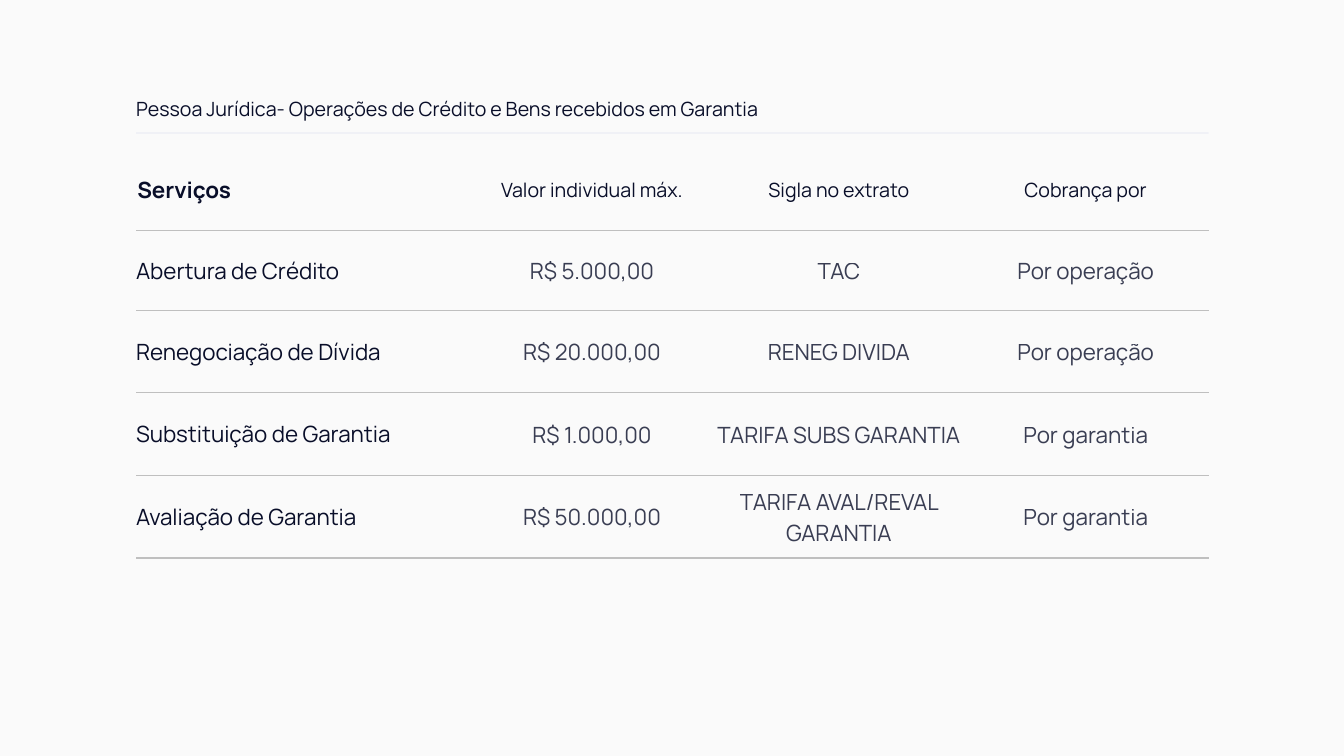
import pptx
import pptx.dml.color
import pptx.enum.shapes
import pptx.enum.text
import pptx.oxml
import pptx.oxml.ns
import pptx.util
from lxml import etree

Cm = pptx.util.Cm
Pt = pptx.util.Pt
RGBColor = pptx.dml.color.RGBColor
PP_ALIGN = pptx.enum.text.PP_ALIGN
MSO_ANCHOR = pptx.enum.text.MSO_ANCHOR
qn = pptx.oxml.ns.qn

BACKGROUND = RGBColor(0xFA, 0xFA, 0xFA)
NAVY = RGBColor(0x09, 0x0E, 0x29)
INDIGO = RGBColor(0x12, 0x26, 0xAA)
GREY = RGBColor(0xBF, 0xBF, 0xBF)
FONT = "Manrope"

LEFT, WIDTH = 3.43, 27.03
COLUMN_WIDTHS = [8.38, 6.22, 6.22, 6.22]
ROW_HEIGHTS = [2.08, 2.01, 2.08, 2.08, 2.08]
FEES = [
    ["Serviços", "Valor individual máx.", "Sigla no extrato", "Cobrança por"],
    ["Abertura de Crédito", "R$ 5.000,00", "TAC", "Por operação"],
    ["Renegociação de Dívida", "R$ 20.000,00", "RENEG DIVIDA", "Por operação"],
    ["Substituição de Garantia", "R$ 1.000,00", "TARIFA SUBS GARANTIA", "Por garantia"],
    ["Avaliação de Garantia", "R$ 50.000,00", "TARIFA AVAL/REVAL GARANTIA", "Por garantia"],
]


def set_alpha(fill_parent, percent):
    """Make the solid colour under fill_parent partly transparent."""
    color = fill_parent.find(qn("a:solidFill")).find(qn("a:srgbClr"))
    etree.SubElement(color, qn("a:alpha")).set("val", str(percent * 1000))


class SlideBuilder:
    """Holds the text style and the slide being built."""

    def __init__(self, prs):
        self.font, self.color = FONT, NAVY
        self.s = prs.slides.add_slide(prs.slide_layouts[5])
        self.s.background.fill.solid()
        self.s.background.fill.fore_color.rgb = BACKGROUND

    def format_text(self, tf, size, bold=False, align=PP_ALIGN.LEFT, alpha=None):
        p = tf.paragraphs[0]
        p.alignment = align
        r = p.runs[0]
        r.font.name, r.font.size, r.font.bold = self.font, Pt(size), bold
        r.font.color.rgb = self.color
        if alpha:
            set_alpha(r.font._element, alpha)

    def title(self, text, left, top, width, height):
        sp = self.s.shapes.title
        sp.left, sp.top, sp.width, sp.height = Cm(left), Cm(top), Cm(width), Cm(height)
        tf = sp.text_frame
        tf.text = text
        tf.word_wrap = True
        tf.auto_size = pptx.enum.text.MSO_AUTO_SIZE.NONE
        tf.vertical_anchor = MSO_ANCHOR.TOP
        tf.margin_left = tf.margin_right = tf.margin_top = tf.margin_bottom = 0
        self.format_text(tf, 14)

    def rule(self, left, top, width, color, weight, alpha):
        line = self.s.shapes.add_connector(
            pptx.enum.shapes.MSO_CONNECTOR.STRAIGHT,
            Cm(left), Cm(top), Cm(left + width), Cm(top))
        line.line.color.rgb = color
        line.line.width = Pt(weight)
        set_alpha(line.line._ln, alpha)
        etree.SubElement(line._element.spPr, qn("a:effectLst"))

    def table(self, rows, left, top, widths, heights):
        table = self.s.shapes.add_table(
            len(rows), len(widths), Cm(left), Cm(top),
            Cm(sum(widths)), Cm(sum(heights))).table
        table.first_row = table.horz_banding = False
        for column, width in zip(table.columns, widths):
            column.width = Cm(width)
        for i, values in enumerate(rows):
            table.rows[i].height = Cm(heights[i])
            for j, value in enumerate(values):
                self.cell(table.cell(i, j), value, header=i == 0, service=j == 0)

    def cell(self, cell, text, header, service):
        cell.text = text
        cell.fill.background()
        cell.vertical_anchor = MSO_ANCHOR.MIDDLE
        inset = 0 if service and not header else Cm(0.03)
        cell.margin_left = cell.margin_right = cell.margin_top = inset
        cell.margin_bottom = 0
        self.format_text(
            cell.text_frame,
            size=14 if header and not service else 16,
            bold=header and service,
            align=PP_ALIGN.LEFT if service else PP_ALIGN.CENTER,
            alpha=None if header or service else 80)
        self.borders(cell, ["lnB"] if header else ["lnT", "lnB"])

    def borders(self, cell, drawn):
        """Draw the named sides of a cell and clear the others."""
        tc_pr = cell._tc.get_or_add_tcPr()
        for i, side in enumerate(["lnL", "lnR", "lnT", "lnB"]):
            ln = etree.Element(qn(f"a:{side}"))
            if side in drawn:
                ln.set("w", str(Pt(1)))
                fill = etree.SubElement(ln, qn("a:solidFill"))
                etree.SubElement(fill, qn("a:srgbClr")).set("val", str(GREY))
            else:
                etree.SubElement(ln, qn("a:noFill"))
            tc_pr.insert(i, ln)


def main():
    prs = pptx.Presentation()
    prs.slide_width, prs.slide_height = Cm(33.87), Cm(19.05)
    slide = SlideBuilder(prs)
    slide.table(FEES, LEFT, 3.73, COLUMN_WIDTHS, ROW_HEIGHTS)
    slide.title("Pessoa Jurídica- Operações de Crédito e Bens recebidos em Garantia",
                LEFT, 2.44, 18.16, 0.61)
    slide.rule(LEFT, 3.35, WIDTH, INDIGO, weight=0.25, alpha=30)
    prs.save("out.pptx")


if __name__ == "__main__":
    main()
